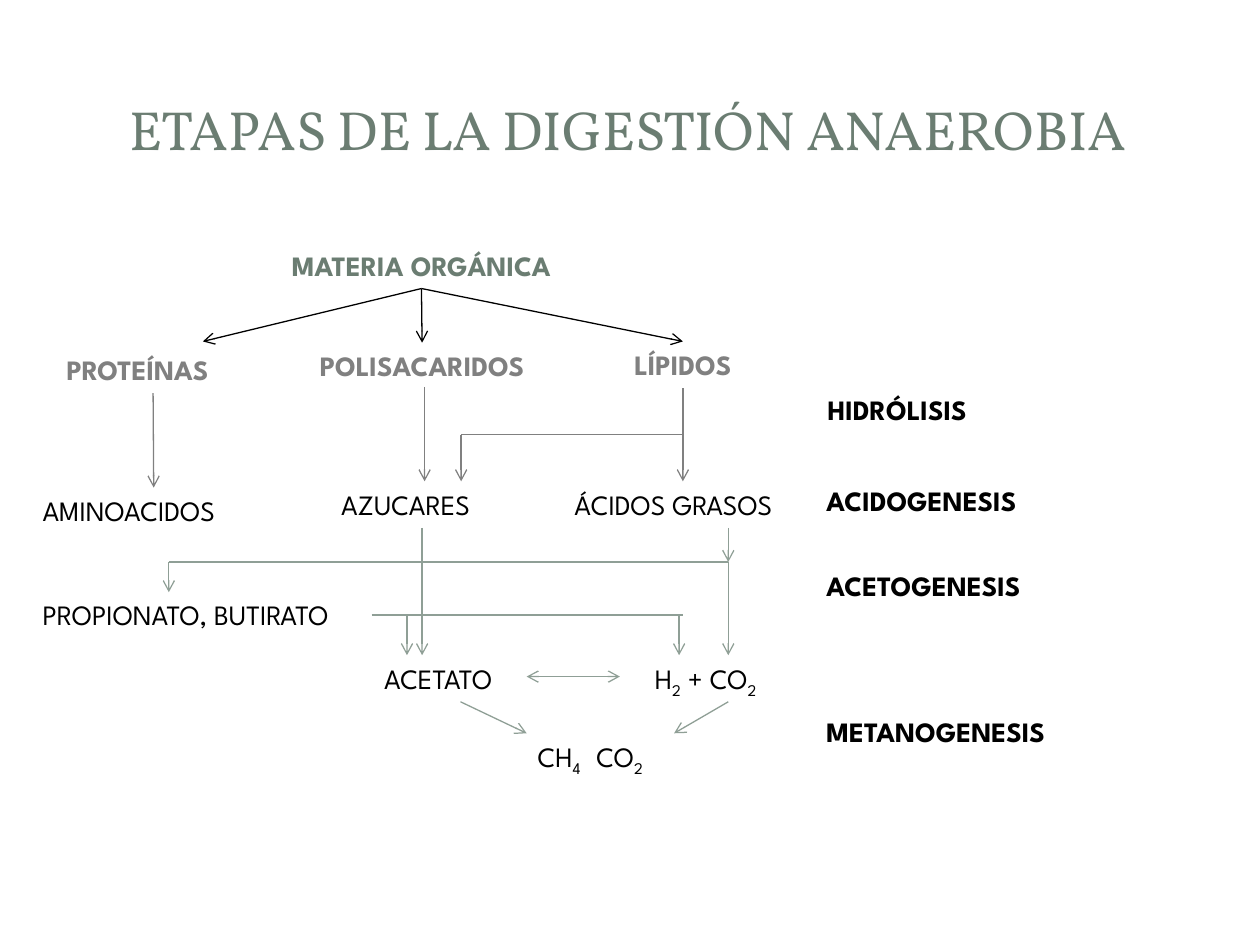
from lxml.etree import SubElement
from pptx import Presentation
from pptx.dml.color import RGBColor
from pptx.enum.shapes import MSO_CONNECTOR
from pptx.enum.text import MSO_ANCHOR, MSO_AUTO_SIZE, PP_ALIGN
from pptx.oxml.ns import qn
from pptx.util import Pt

PX = 9144  # EMU per px, 100 px to the inch
COLORS = {"green": "6B7D72", "gray": "808080", "sage": "8F9F96", "black": "000000"}
TITLE_FONT, BODY_FONT = "Vollkorn", "League Spartan"
LINE_HEIGHT = 37
LEFT, CENTER = PP_ALIGN.LEFT, PP_ALIGN.CENTER
TOP, BOTTOM = 0, 2

# name: (text, x, y, width, height, colour, bold, alignment); _n_ is a subscript
NODES = {
    "materia": ("MATERIA ORGÁNICA", 169, 0, 283, LINE_HEIGHT, "green", True, CENTER),
    "proteinas": ("PROTEÍNAS", 19, 83, 157, LINE_HEIGHT, "gray", True, LEFT),
    "polisacaridos": ("POLISACARIDOS", 200, 80, 222, LINE_HEIGHT, "gray", True, CENTER),
    "lipidos": ("LÍPIDOS", 452, 79, 132, LINE_HEIGHT, "gray", True, CENTER),
    "acidos": ("ÁCIDOS GRASOS", 422, 190, 208, LINE_HEIGHT, "black", False, LEFT),
    "azucares": ("AZUCARES", 220, 190, 156, LINE_HEIGHT, "black", False, CENTER),
    "aminoacidos": ("AMINOACIDOS", 0, 195, 220, LINE_HEIGHT, "black", False, LEFT),
    "propionato": ("PROPIONATO, BUTIRATO", 0, 277, 342, LINE_HEIGHT, "black", False, LEFT),
    "acetato": ("ACETATO", 271, 328, 141, LINE_HEIGHT, "black", False, LEFT),
    "hidrogeno": ("H_2_ + CO_2_", 486, 328, 136, LINE_HEIGHT, "black", False, LEFT),
    "metano": ("CH_4 _CO_2_", 374, 390, 141, 55, "black", False, CENTER),
}

# (start, end, colour, arrowheads); an end is a point or a (node, side) pair
LINKS = [
    (("materia", BOTTOM), (137, 79), "black", ["tailEnd"]),
    (("materia", BOTTOM), ("polisacaridos", TOP), "black", ["tailEnd"]),
    (("materia", BOTTOM), ("lipidos", TOP), "black", ["tailEnd"]),
    (("proteinas", BOTTOM), (98, 195), "gray", ["tailEnd"]),
    ((313, 115), (313, 190), "gray", ["tailEnd"]),
    (("lipidos", BOTTOM), (518, 190), "gray", ["tailEnd"]),
    ((518, 153), (342, 153), "gray", []),
    ((342, 153), (342, 190), "gray", ["tailEnd"]),
    ((311, 227), (311, 328), "sage", ["tailEnd"]),
    ((394, 345), (468, 345), "sage", ["headEnd", "tailEnd"]),
    ((110, 254), (554, 254), "sage", []),
    ((110, 254), (110, 278), "sage", ["tailEnd"]),
    ((554, 254), ("hidrogeno", TOP), "sage", ["tailEnd"]),
    ((299, 296), (299, 328), "sage", ["tailEnd"]),
    ((515, 296), (515, 328), "sage", ["tailEnd"]),
    ((271, 296), (518, 296), "sage", []),
    ((554, 227), (554, 254), "sage", ["tailEnd"]),
    (("acetato", BOTTOM), (394, 390), "sage", ["tailEnd"]),
    (("hidrogeno", BOTTOM), (511, 390), "sage", ["tailEnd"]),
]

STAGES = [("HIDRÓLISIS", 1, 0), ("ACIDOGENESIS", 0, 72),
          ("ACETOGENESIS", 0, 139), ("METANOGENESIS", 0, 255)]


def set_all(target, formats):
    for attribute, value in formats.items():
        setattr(target, attribute, value)


def format_font(font, name, size, color, bold=False):
    set_all(font, {"name": name, "size": Pt(size), "bold": bold})
    font.color.rgb = RGBColor.from_string(COLORS[color])


def add_label(slide, text, box, color, bold, alignment):
    """Add a one-line label, with the parts between underscores as subscripts."""
    label = slide.shapes.add_textbox(*(length * PX for length in box))
    set_all(label.text_frame, {"word_wrap": True,
                               "auto_size": MSO_AUTO_SIZE.SHAPE_TO_FIT_TEXT})
    paragraph = label.text_frame.paragraphs[0]
    paragraph.alignment = alignment
    for index, part in enumerate(text.split("_")):
        if not part:
            continue
        run = paragraph.add_run()
        run.text = part
        format_font(run.font, BODY_FONT, 16, color, bold)
        if index % 2:
            properties = run.font._element
            properties.set("baseline", "-25000")
            if part.endswith(" "):  # widen the gap between two formulas
                properties.set("spc", "340")
    return label


def add_link(slide, origin, labels, start, end, color, heads):
    points = [(0, 0) if isinstance(stop[0], str) else
              [(base + offset) * PX for base, offset in zip(origin, stop)]
              for stop in (start, end)]
    link = slide.shapes.add_connector(MSO_CONNECTOR.STRAIGHT, *points[0], *points[1])
    for stop, connect in ((start, link.begin_connect), (end, link.end_connect)):
        if isinstance(stop[0], str):
            connect(labels[stop[0]], stop[1])
    link.line.width = Pt(0.75)
    link.line.color.rgb = RGBColor.from_string(COLORS[color])
    outline = link.line._get_or_add_ln()
    for head in heads:
        SubElement(outline, qn(f"a:{head}"), type="arrow")
    SubElement(link._element.spPr, qn("a:effectLst"))


def place_title(slide, left, top, width, height):
    title = slide.shapes.title
    set_all(title, {"left": left * PX, "top": top * PX,
                    "width": width * PX, "height": height * PX})
    title.text_frame.text = "ETAPAS DE LA DIGESTIÓN ANAEROBIA"
    set_all(title.text_frame, {"vertical_anchor": MSO_ANCHOR.MIDDLE, "word_wrap": True,
                               "auto_size": MSO_AUTO_SIZE.NONE})
    paragraph = title.text_frame.paragraphs[0]
    paragraph.alignment = CENTER
    format_font(paragraph.runs[0].font, TITLE_FONT, 31.5, "green")


def draw_flow(slide, left, top):
    labels = {}
    for name, (text, x, y, width, height, *style) in NODES.items():
        labels[name] = add_label(slide, text, (left + x, top + y, width, height), *style)
    for link in LINKS:
        add_link(slide, (left, top), labels, *link)


def list_stages(slide, left, top, width):
    for text, x, y in STAGES:
        add_label(slide, text, (left + x, top + y, width, LINE_HEIGHT), "black", True, LEFT)


def main():
    deck = Presentation()
    set_all(deck, {"slide_width": 1000 * PX, "slide_height": 750 * PX})
    slide = deck.slides.add_slide(deck.slide_layouts.get_by_name("Title Only"))
    place_title(slide, 47, 45, 903, 114)
    draw_flow(slide, 24, 192)
    list_stages(slide, 646, 307, 208)
    deck.save("out.pptx")


if __name__ == "__main__":
    main()
